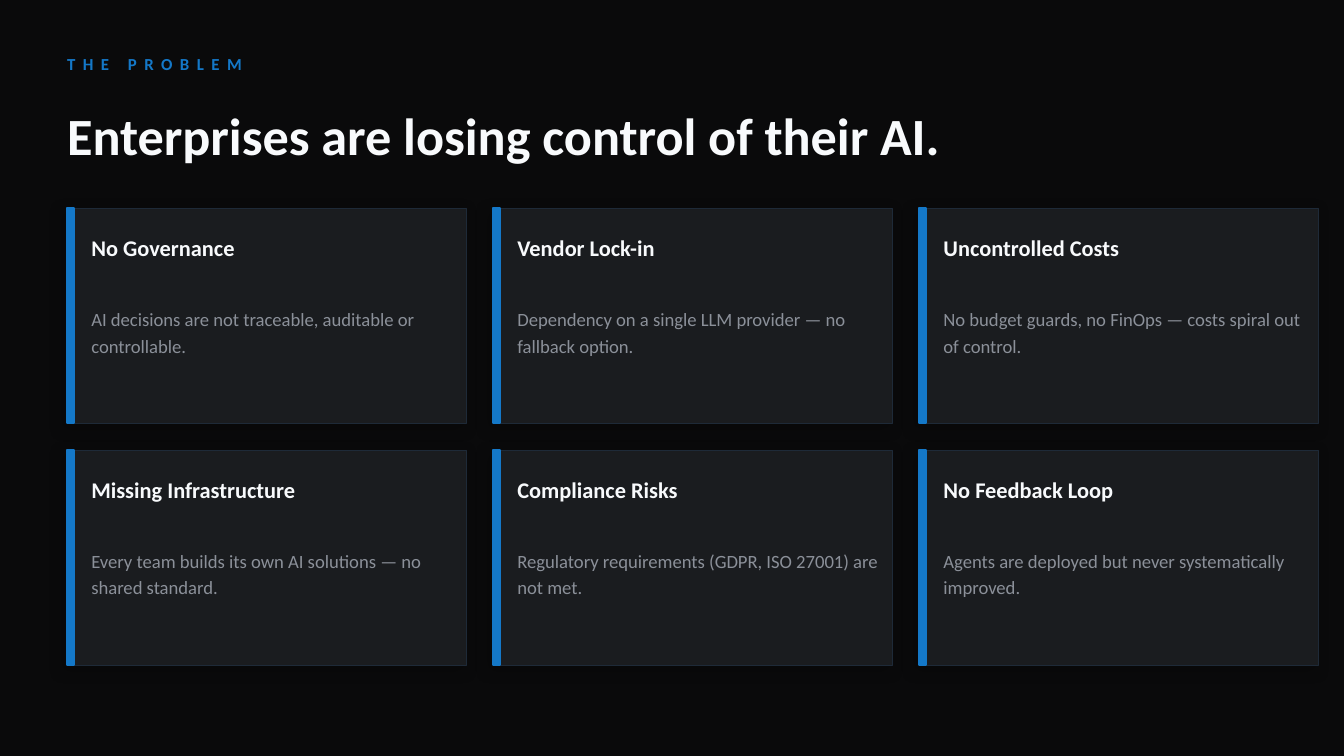
from dataclasses import dataclass

from pptx import Presentation
from pptx.dml.color import RGBColor
from pptx.enum.shapes import MSO_SHAPE
from pptx.enum.text import MSO_ANCHOR
from pptx.oxml import parse_xml
from pptx.oxml.ns import nsdecls
from pptx.util import Inches, Pt

RECT = MSO_SHAPE.RECTANGLE
MIDDLE = MSO_ANCHOR.MIDDLE

CARDS = [
    ("No Governance", "AI decisions are not traceable, auditable or controllable."),
    ("Vendor Lock-in", "Dependency on a single LLM provider — no fallback option."),
    ("Uncontrolled Costs", "No budget guards, no FinOps — costs spiral out of control."),
    ("Missing Infrastructure", "Every team builds its own AI solutions — no shared standard."),
    ("Compliance Risks", "Regulatory requirements (GDPR, ISO 27001) are not met."),
    ("No Feedback Loop", "Agents are deployed but never systematically improved."),
]
COLS = 3
LEFT, TOP = 0.5, 1.55
WIDE, HIGH, GAP = 2.97, 1.6, 0.2


@dataclass(frozen=True)
class Theme:
    """Colours, font and type sizes of the slide."""

    back: str = "0A0A0B"
    card: str = "1A1C1F"
    edge: str = "1E2A38"
    accent: str = "1478C8"
    bright: str = "F8FAFC"
    muted: str = "8B9099"
    shade: str = "000000"
    font: str = "Calibri"
    label: int = 9
    title: int = 28
    head: int = 12
    body: int = 10


class Deck:
    """Holds the theme and the current slide and draws on it."""

    def __init__(self, slide, theme):
        """Keep the slide and theme and paint the background."""
        self.slide = slide
        self.theme = theme
        fill = slide.background.fill
        fill.solid()
        fill.fore_color.rgb = RGBColor.from_string(theme.back)

    def text(self, words, x, y, w, h, size, color, bold=True, track=0, lead=None):
        """Add a one-paragraph text box without margins."""
        box = self.slide.shapes.add_textbox(Inches(x), Inches(y), Inches(w), Inches(h))
        frame = box.text_frame
        frame.word_wrap = True
        frame.vertical_anchor = MIDDLE
        frame.margin_left = frame.margin_right = 0
        frame.margin_top = frame.margin_bottom = 0
        frame.text = words
        para = frame.paragraphs[0]
        if lead:
            para.line_spacing = lead
        run = para.runs[0]
        run.font.name = self.theme.font
        run.font.size = Pt(size)
        run.font.bold = bold
        run.font.color.rgb = RGBColor.from_string(color)
        if track:
            run.font._element.set("spc", str(track * 100))

    def rect(self, x, y, w, h, fill, line, weight):
        """Add a filled and outlined rectangle."""
        shape = self.slide.shapes.add_shape(RECT, Inches(x), Inches(y), Inches(w), Inches(h))
        shape.shadow.inherit = False
        shape.fill.solid()
        shape.fill.fore_color.rgb = RGBColor.from_string(fill)
        shape.line.color.rgb = RGBColor.from_string(line)
        shape.line.width = Pt(weight)
        return shape

    def shadow(self, shape, alpha=25, blur=8, dist=3, angle=135):
        """Give a shape a soft outer shadow."""
        effects = shape._element.spPr.find("{*}effectLst")
        effects.append(parse_xml(
            f'<a:outerShdw {nsdecls("a")} blurRad="{Pt(blur)}" dist="{Pt(dist)}" '
            f'dir="{angle * 60000}" algn="bl" rotWithShape="0">'
            f'<a:srgbClr val="{self.theme.shade}"><a:alpha val="{alpha * 1000}"/></a:srgbClr>'
            f'</a:outerShdw>'
        ))

    def card(self, x, y, head, body):
        """Add a card with an accent bar, a heading and a body."""
        look = self.theme
        self.shadow(self.rect(x, y, WIDE, HIGH, look.card, look.edge, 0.5))
        self.rect(x, y, 0.05, HIGH, look.accent, look.accent, 1)
        self.text(head, x + 0.18, y + 0.12, 2.7, 0.35, look.head, look.bright)
        self.text(body, x + 0.18, y + 0.48, 2.7, 0.85, look.body, look.muted,
                  bold=False, lead=1.2)


def main():
    """Build the slide and save it."""
    prs = Presentation()
    prs.slide_width = Inches(10)
    prs.slide_height = prs.slide_width * 9 // 16
    look = Theme()
    deck = Deck(prs.slides.add_slide(prs.slide_layouts[6]), look)
    deck.text("THE PROBLEM", LEFT, 0.35, 5, 0.25, look.label, look.accent, track=4)
    deck.text("Enterprises are losing control of their AI.", LEFT, 0.65, 9, 0.7,
              look.title, look.bright)
    for i, (head, body) in enumerate(CARDS):
        row, col = divmod(i, COLS)
        deck.card(LEFT + col * (WIDE + GAP), TOP + row * (HIGH + GAP), head, body)
    prs.save("out.pptx")


if __name__ == "__main__":
    main()
